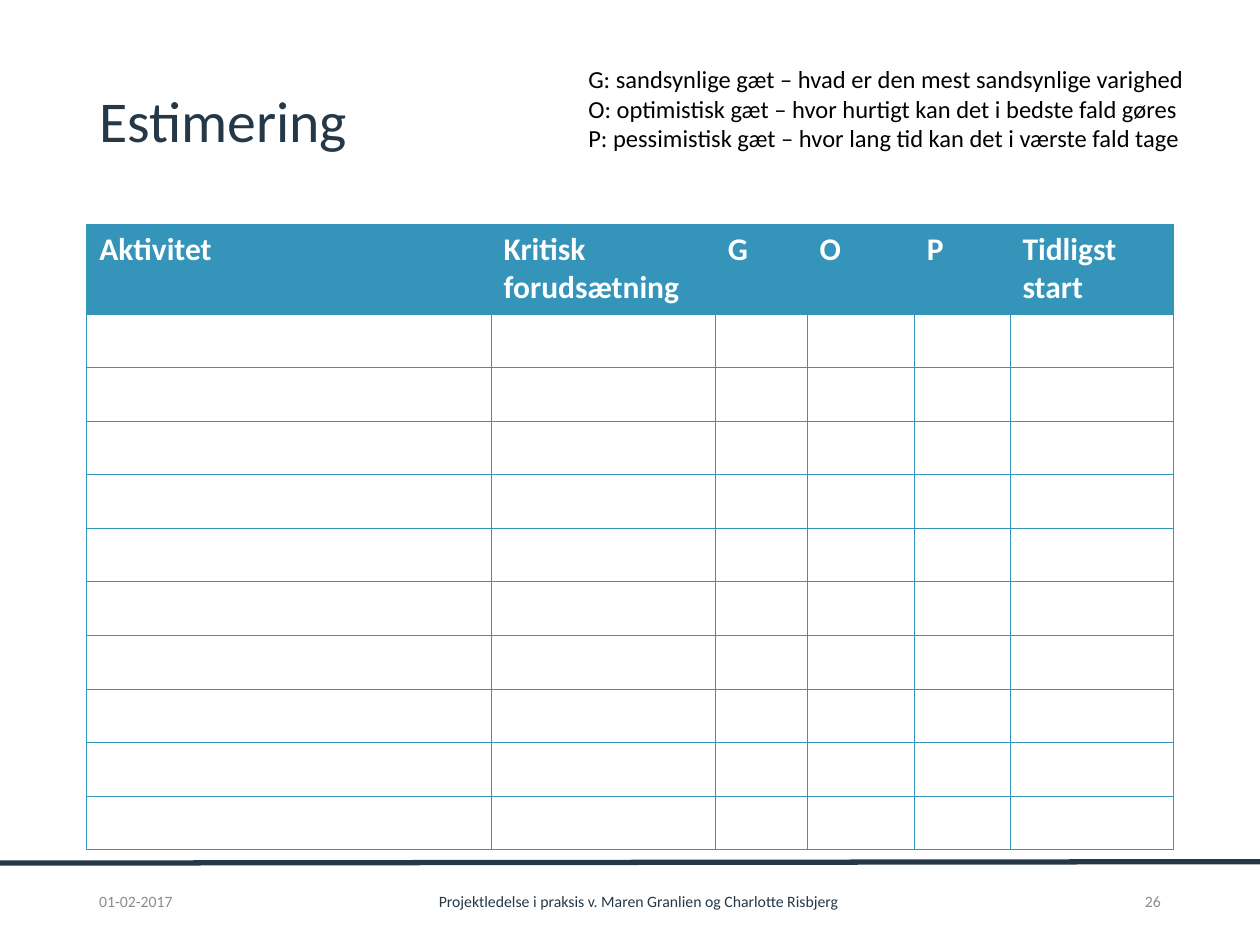
from dataclasses import dataclass

from lxml import etree
from pptx import Presentation
from pptx.dml.color import RGBColor
from pptx.enum.shapes import MSO_CONNECTOR
from pptx.enum.text import MSO_ANCHOR, PP_ALIGN
from pptx.oxml.ns import qn
from pptx.slide import Slide
from pptx.table import _Cell
from pptx.text.text import _Paragraph
from pptx.util import Cm, Pt

STRAIGHT = MSO_CONNECTOR.STRAIGHT
TOP, MIDDLE = MSO_ANCHOR.TOP, MSO_ANCHOR.MIDDLE
LEFT, CENTER, RIGHT = PP_ALIGN.LEFT, PP_ALIGN.CENTER, PP_ALIGN.RIGHT


@dataclass(frozen=True)
class Theme:
    font: str = "Calibri"
    navy: str = "253848"
    teal: str = "3494BA"
    gray: str = "8C8C8C"
    black: str = "000000"
    white: str = "FFFFFF"
    title_size: float = 33
    header_size: float = 18
    legend_size: float = 14
    footer_size: float = 9
    rule_width: float = 3
    border_width: float = 0.5


@dataclass(frozen=True)
class TextBlock:
    lines: tuple[str, ...]
    left: float
    top: float
    width: float
    height: float
    size: float
    color: str
    align: PP_ALIGN = LEFT
    anchor: MSO_ANCHOR = MIDDLE
    line_spacing: float = 1.0


@dataclass(frozen=True)
class Column:
    heading: str
    width: float


THEME = Theme()
SIDE = 1.75
FOOTER_TOP, FOOTER_HEIGHT = 17.65, 1.02
TABLE_TOP, HEADER_HEIGHT, ROW_HEIGHT, EMPTY_ROWS = 4.52, 1.81, 1.08, 10

COLUMNS = (
    Column("Aktivitet", 8.15),
    Column("Kritisk forudsætning", 4.52),
    Column("G", 1.85),
    Column("O", 2.16),
    Column("P", 1.93),
    Column("Tidligst start", 3.3),
)

LEGEND = (
    "G: sandsynlige gæt – hvad er den mest sandsynlige varighed",
    "O: optimistisk gæt – hvor hurtigt kan det i bedste fald gøres",
    "P: pessimistisk gæt – hvor lang tid kan det i værste fald tage",
)

TEXT_BLOCKS = (
    TextBlock(("Estimering",), SIDE, 0.66, 21.9, 3.68,
              THEME.title_size, THEME.navy, line_spacing=0.9),
    TextBlock(LEGEND, 11.61, 1.17, 17.32, 2.64,
              THEME.legend_size, THEME.black, anchor=TOP),
    TextBlock(("01-02-2017",), SIDE, FOOTER_TOP, 2.51, FOOTER_HEIGHT,
              THEME.footer_size, THEME.gray),
    TextBlock(("Projektledelse i praksis v. Maren Granlien og Charlotte Risbjerg",),
              4.5, FOOTER_TOP, 16.74, FOOTER_HEIGHT,
              THEME.footer_size, THEME.navy, CENTER),
    TextBlock(("26",), 21.69, FOOTER_TOP, 1.96, FOOTER_HEIGHT,
              THEME.footer_size, THEME.gray, RIGHT),
)


def add_span(para: _Paragraph, text: str, size: float, color: str,
             bold: bool = False) -> None:
    span = para.add_run()
    span.text = text
    span.font.name = THEME.font
    span.font.size = Pt(size)
    span.font.bold = bold
    span.font.color.rgb = RGBColor.from_string(color)


def add_text(page: Slide, block: TextBlock) -> None:
    box = page.shapes.add_textbox(
        Cm(block.left), Cm(block.top), Cm(block.width), Cm(block.height))
    frame = box.text_frame
    frame.word_wrap = True
    frame.vertical_anchor = block.anchor
    for index, line in enumerate(block.lines):
        para = frame.add_paragraph() if index else frame.paragraphs[0]
        para.alignment = block.align
        para.line_spacing = block.line_spacing
        add_span(para, line, block.size, block.color)


def add_footer_rule(page: Slide) -> None:
    rule = page.shapes.add_connector(STRAIGHT, Cm(0), Cm(17.4), Cm(25.4), Cm(17.37))
    rule.line.color.rgb = RGBColor.from_string(THEME.navy)
    rule.line.width = Pt(THEME.rule_width)
    etree.SubElement(rule._element.spPr, qn("a:effectLst"))


def set_borders(cell: _Cell) -> None:
    properties = cell._tc.get_or_add_tcPr()
    for position, side in enumerate(("a:lnL", "a:lnR", "a:lnT", "a:lnB")):
        border = etree.Element(qn(side), w=str(Pt(THEME.border_width)))
        fill = etree.SubElement(border, qn("a:solidFill"))
        etree.SubElement(fill, qn("a:srgbClr"), val=THEME.teal)
        properties.insert(position, border)


def add_estimate_table(page: Slide) -> None:
    width = sum(column.width for column in COLUMNS)
    height = HEADER_HEIGHT + EMPTY_ROWS * ROW_HEIGHT
    table = page.shapes.add_table(
        EMPTY_ROWS + 1, len(COLUMNS),
        Cm(SIDE), Cm(TABLE_TOP), Cm(width), Cm(height)).table
    table.horz_banding = False
    for index, row in enumerate(table.rows):
        row.height = Cm(ROW_HEIGHT if index else HEADER_HEIGHT)
    for index, column in enumerate(COLUMNS):
        table.columns[index].width = Cm(column.width)
        header = table.cell(0, index)
        add_span(header.text_frame.paragraphs[0], column.heading,
                 THEME.header_size, THEME.white, bold=True)
        header.fill.solid()
        header.fill.fore_color.rgb = RGBColor.from_string(THEME.teal)
        for row_index in range(1, EMPTY_ROWS + 1):
            table.cell(row_index, index).fill.background()
    for cell in table.iter_cells():
        set_borders(cell)


def main() -> None:
    deck = Presentation()
    deck.slide_width, deck.slide_height = Cm(25.4), Cm(19.05)
    page = deck.slides.add_slide(deck.slide_layouts[6])
    add_footer_rule(page)
    add_estimate_table(page)
    for block in TEXT_BLOCKS:
        add_text(page, block)
    deck.save("out.pptx")


if __name__ == "__main__":
    main()
